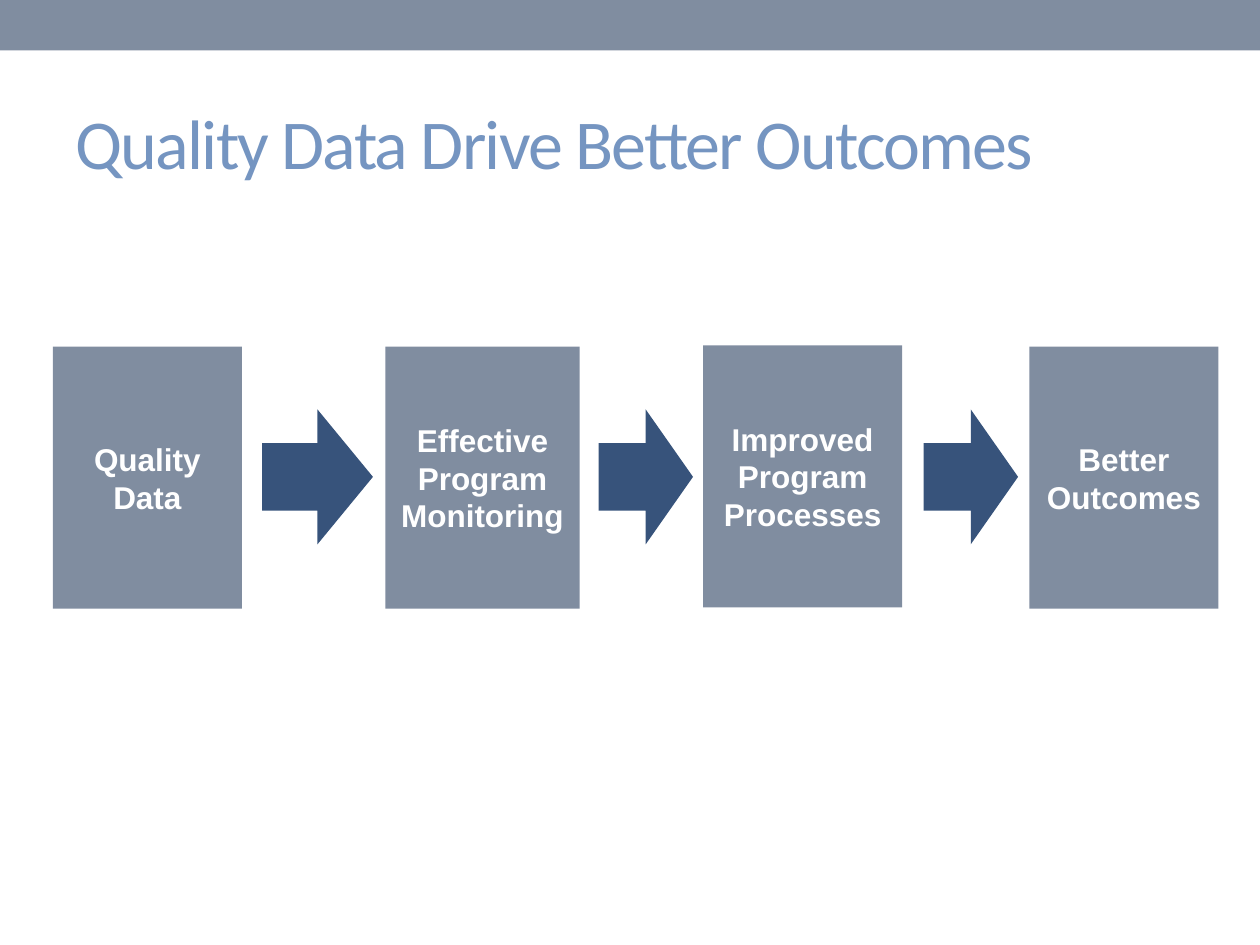
from pptx import Presentation
from pptx.dml.color import RGBColor
from pptx.enum.shapes import MSO_SHAPE as Shape
from pptx.enum.text import MSO_ANCHOR as Anchor, PP_ALIGN as Align
from pptx.util import Inches, Pt

SLATE = RGBColor(0x80, 0x8D, 0xA0)
NAVY = RGBColor(0x37, 0x53, 0x7B)
SKY = RGBColor(0x75, 0x95, 0xC1)
WHITE = RGBColor(0xFF, 0xFF, 0xFF)

STAGES = [
    ("Quality Data", 0.42, 2.75, 1.5),
    ("Effective Program Monitoring", 3.06, 2.75, 1.54),
    ("Improved Program Processes", 5.58, 2.74, 1.58),
    ("Better Outcomes", 8.17, 2.75, 1.5),
]
STAGE_HEIGHT = 2.08
ARROWS = [(2.08, 0.88), (4.75, 0.75), (7.33, 0.75)]
ARROW_TOP, ARROW_HEIGHT = 3.25, 1.07


def add_filled(slide, preset, box, color):
    shape = slide.shapes.add_shape(preset, *map(Inches, box))
    shape.shadow.inherit = False
    shape.fill.solid()
    shape.fill.fore_color.rgb = color
    shape.line.fill.background()
    return shape


def write_text(shape, text, font_name, size, color, align, bold=False):
    frame = shape.text_frame
    frame.word_wrap = True
    frame.vertical_anchor = Anchor.MIDDLE
    paragraph = frame.paragraphs[0]
    paragraph.alignment = align
    run = paragraph.add_run()
    run.text = text
    run.font.name = font_name
    run.font.size = Pt(size)
    run.font.bold = bold
    run.font.color.rgb = color
    return run


def add_heading(slide, box):
    heading = slide.shapes.add_textbox(*map(Inches, box))
    run = write_text(heading, "Quality Data Drive Better Outcomes",
                     "Calibri", 40, SKY, Align.LEFT)
    run.font._element.set("spc", "-100")


def add_stage(slide, label, box):
    stage = add_filled(slide, Shape.RECTANGLE, box, SLATE)
    write_text(stage, label, "Arial", 18, WHITE, Align.CENTER, bold=True)


def main():
    deck = Presentation()
    deck.slide_width, deck.slide_height = Inches(10), Inches(7.5)
    slide = deck.slides.add_slide(deck.slide_layouts[6])

    add_filled(slide, Shape.RECTANGLE, (0, 0, 10, 0.4), SLATE)
    add_heading(slide, (0.5, 0.58, 9, 1.08))
    for label, left, top, width in STAGES:
        add_stage(slide, label, (left, top, width, STAGE_HEIGHT))
    for left, width in ARROWS:
        add_filled(slide, Shape.RIGHT_ARROW,
                   (left, ARROW_TOP, width, ARROW_HEIGHT), NAVY)

    deck.save("out.pptx")


if __name__ == "__main__":
    main()
